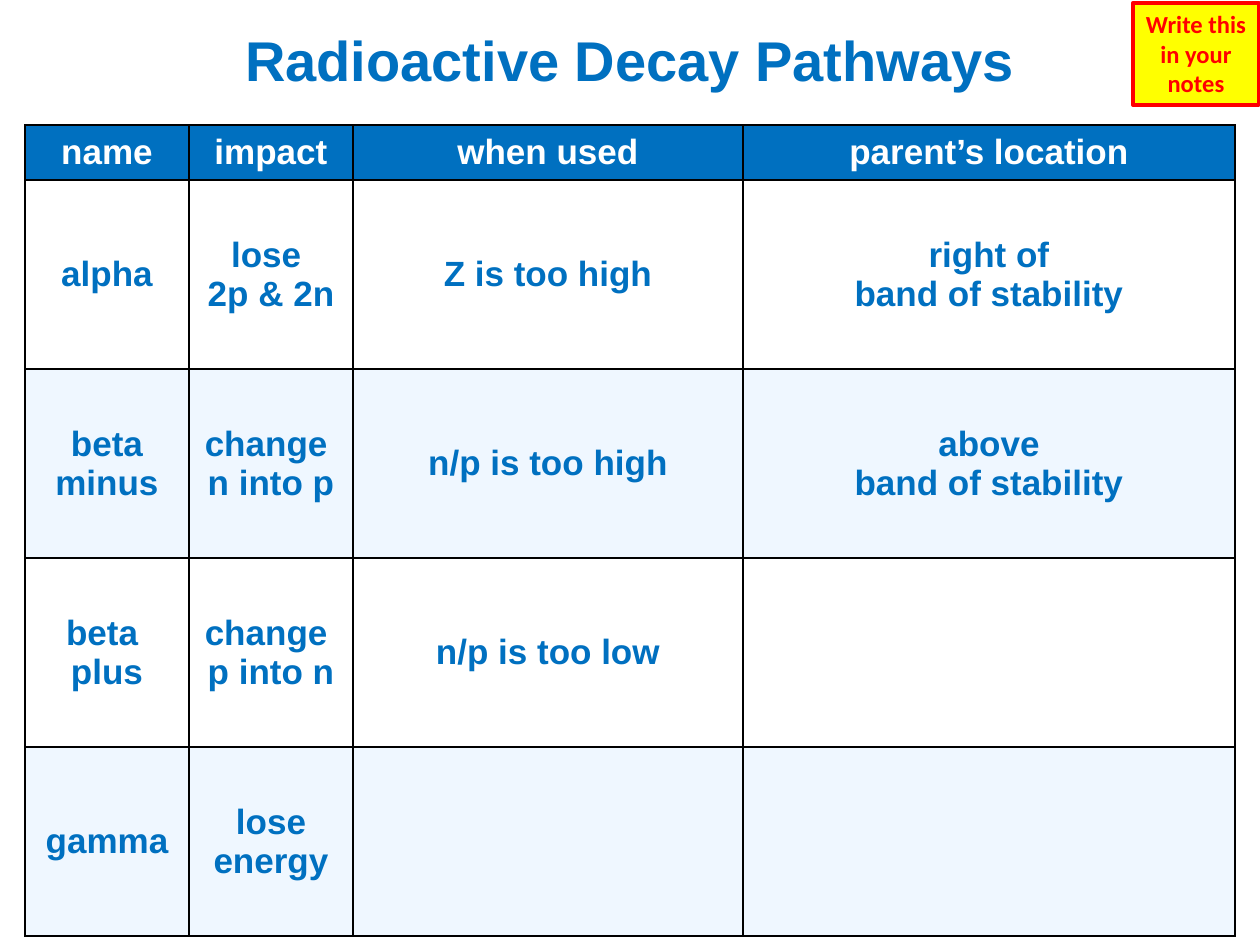
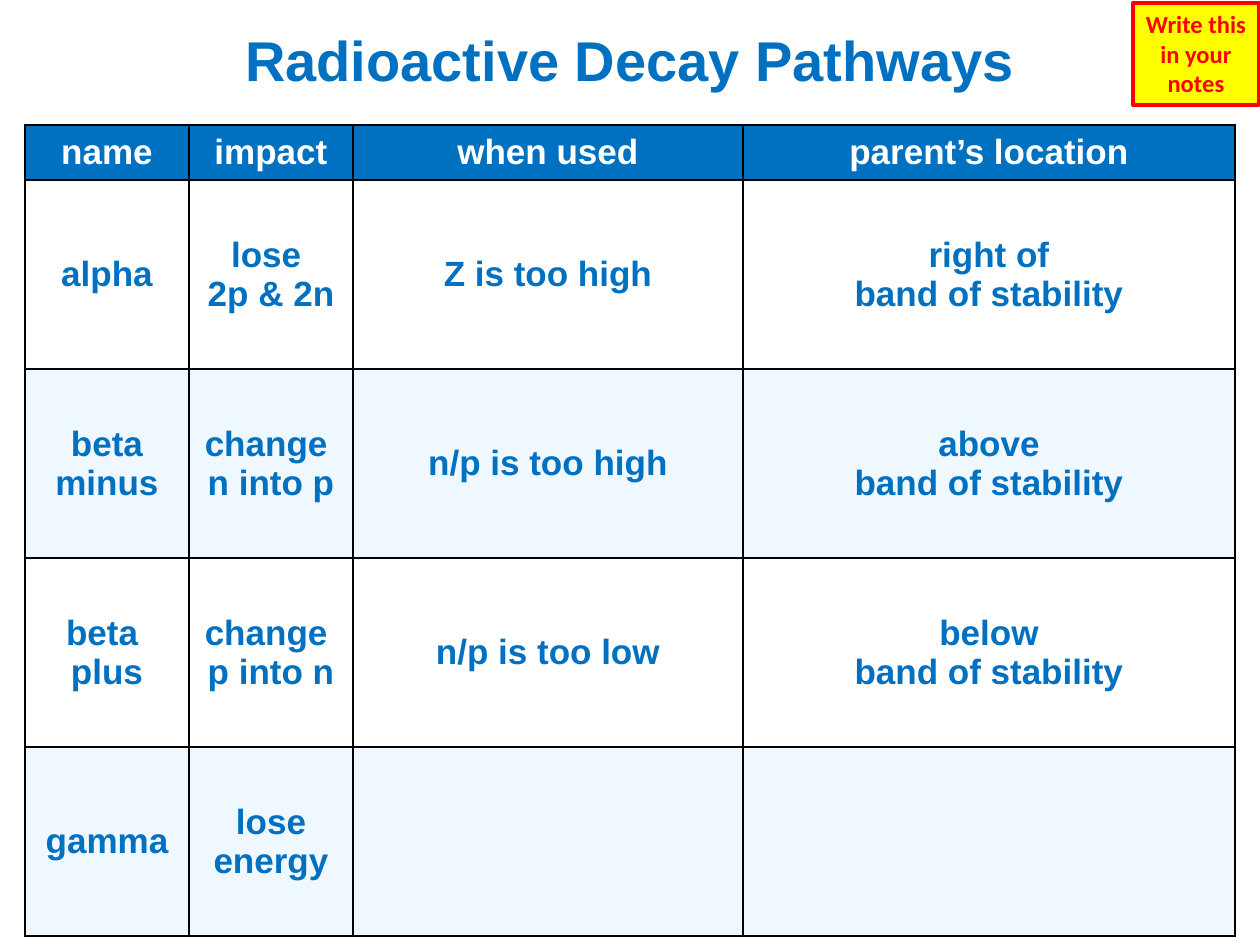
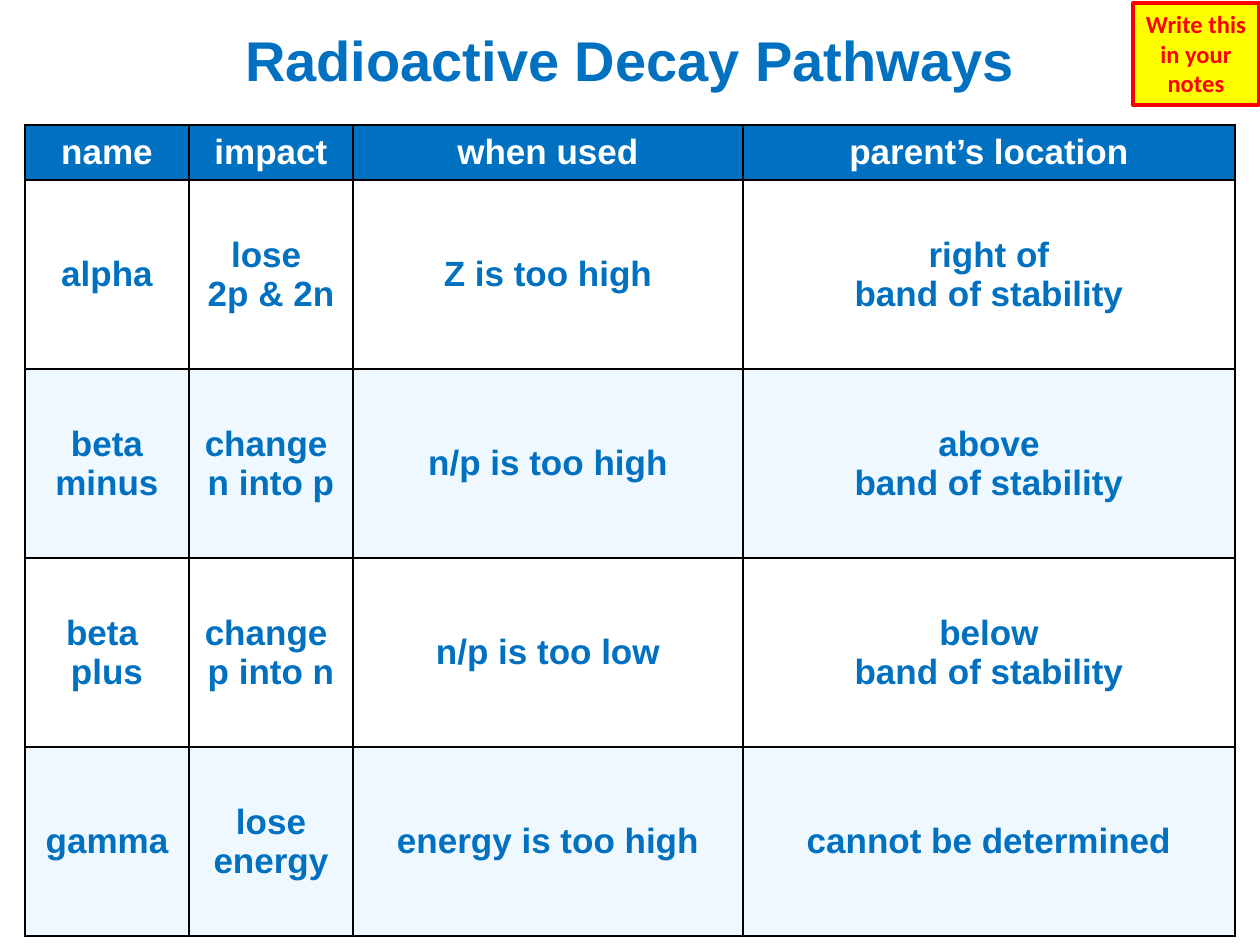
import lxml.etree
import pptx
import pptx.dml.color
import pptx.enum.shapes
import pptx.enum.text
import pptx.oxml.ns
import pptx.util

TITLE = "Radioactive Decay Pathways"
HEADERS = ["name", "impact", "when used", "parent’s location"]
PATHWAYS = [
    ["alpha", "lose \n2p & 2n", "Z is too high", "right of\nband of stability"],
    ["beta\nminus", "change \nn into p", "n/p is too high", "above\nband of stability"],
    ["beta \nplus", "change \np into n", "n/p is too low", "below\nband of stability"],
    ["gamma", "lose\nenergy", "energy is too high", "cannot be determined"],
]
REMINDER = "Write this in your notes"
HIDDEN_ANSWERS = [
    {"n/p is too low": ["parent’s location"], "energy is too high": ["when used", "parent’s location"]},
    {"energy is too high": ["when used", "parent’s location"]},
    {},
]

COLORS = {
    "blue": "0070C0",
    "white": "FFFFFF",
    "pale": "EFF7FF",
    "black": "000000",
    "yellow": "FFFF00",
    "red": "FF0000",
}
SLIDE_SIZE = (1260, 945)
TABLE_ORIGIN = (25, 24)
COLUMN_WIDTHS = [164, 164, 390, 492]
TITLE_HEIGHT, HEADER_HEIGHT, PATHWAY_HEIGHT = 101, 55, 189
REMINDER_BOX = (1133, 3, 126, 102)


def px(length):
    return pptx.util.Emu(round(length * 914400 / 126))


def color(name):
    return pptx.dml.color.RGBColor.from_string(COLORS[name])


def style_text(text_frame, font_name, size, color_name):
    for paragraph in text_frame.paragraphs:
        paragraph.alignment = pptx.enum.text.PP_ALIGN.CENTER
        font = paragraph.font
        font.name, font.size, font.bold = font_name, pptx.util.Pt(size), True
        font.color.rgb = color(color_name)


def set_borders(cell, visible_sides):
    qualified = pptx.oxml.ns.qn
    properties = cell._tc.get_or_add_tcPr()
    for side in "LRTB":
        line = lxml.etree.SubElement(properties, qualified("a:ln" + side), w="12700")
        if side in visible_sides:
            fill = lxml.etree.SubElement(line, qualified("a:solidFill"))
            lxml.etree.SubElement(fill, qualified("a:srgbClr"), val=COLORS["black"])
        else:
            lxml.etree.SubElement(line, qualified("a:noFill"))


def fill_cell(cell, text, fill_name, text_color):
    set_borders(cell, "LRTB")
    cell.fill.solid()
    cell.fill.fore_color.rgb = color(fill_name)
    cell.vertical_anchor = pptx.enum.text.MSO_ANCHOR.MIDDLE
    cell.text = text
    style_text(cell.text_frame, "Arial", 20, text_color)


def add_pathway_table(slide, hidden):
    heights = [TITLE_HEIGHT, HEADER_HEIGHT] + [PATHWAY_HEIGHT] * len(PATHWAYS)
    frame = slide.shapes.add_table(
        len(heights), len(HEADERS), *map(px, (*TABLE_ORIGIN, sum(COLUMN_WIDTHS), sum(heights)))
    )
    table = frame.table
    table.first_row = table.horz_banding = False
    for column, width in zip(table.columns, COLUMN_WIDTHS):
        column.width = px(width)
    for row, height in zip(table.rows, heights):
        row.height = px(height)

    for cell in table.rows[0].cells:
        set_borders(cell, "B")
        cell.fill.background()
    title_cell = table.cell(0, 0)
    title_cell.merge(table.cell(0, len(HEADERS) - 1))
    title_cell.text = TITLE
    style_text(title_cell.text_frame, "Arial", 32, "blue")

    for column, header in enumerate(HEADERS):
        fill_cell(table.cell(1, column), header, "blue", "white")
    for index, pathway in enumerate(PATHWAYS):
        hidden_headers = hidden.get(pathway[2], [])
        for column, (header, answer) in enumerate(zip(HEADERS, pathway)):
            text = "" if header in hidden_headers else answer
            fill_cell(table.cell(index + 2, column), text, ("white", "pale")[index % 2], "blue")


def add_reminder(slide):
    reminder = slide.shapes.add_shape(
        pptx.enum.shapes.MSO_SHAPE.RECTANGLE, *map(px, REMINDER_BOX)
    )
    reminder.shadow.inherit = False
    reminder.fill.solid()
    reminder.fill.fore_color.rgb = color("yellow")
    reminder.line.color.rgb = color("red")
    reminder.line.width = pptx.util.Pt(2.25)
    text_frame = reminder.text_frame
    text_frame.word_wrap = True
    text_frame.vertical_anchor = pptx.enum.text.MSO_ANCHOR.TOP
    text_frame.auto_size = pptx.enum.text.MSO_AUTO_SIZE.SHAPE_TO_FIT_TEXT
    text_frame.text = REMINDER
    style_text(text_frame, "Calibri", 14, "red")


def main():
    presentation = pptx.Presentation()
    presentation.slide_width, presentation.slide_height = map(px, SLIDE_SIZE)
    blank_layout = presentation.slide_layouts.get_by_name("Blank")
    for hidden in HIDDEN_ANSWERS:
        slide = presentation.slides.add_slide(blank_layout)
        add_pathway_table(slide, hidden)
        add_reminder(slide)
    presentation.save("out.pptx")


if __name__ == "__main__":
    main()
